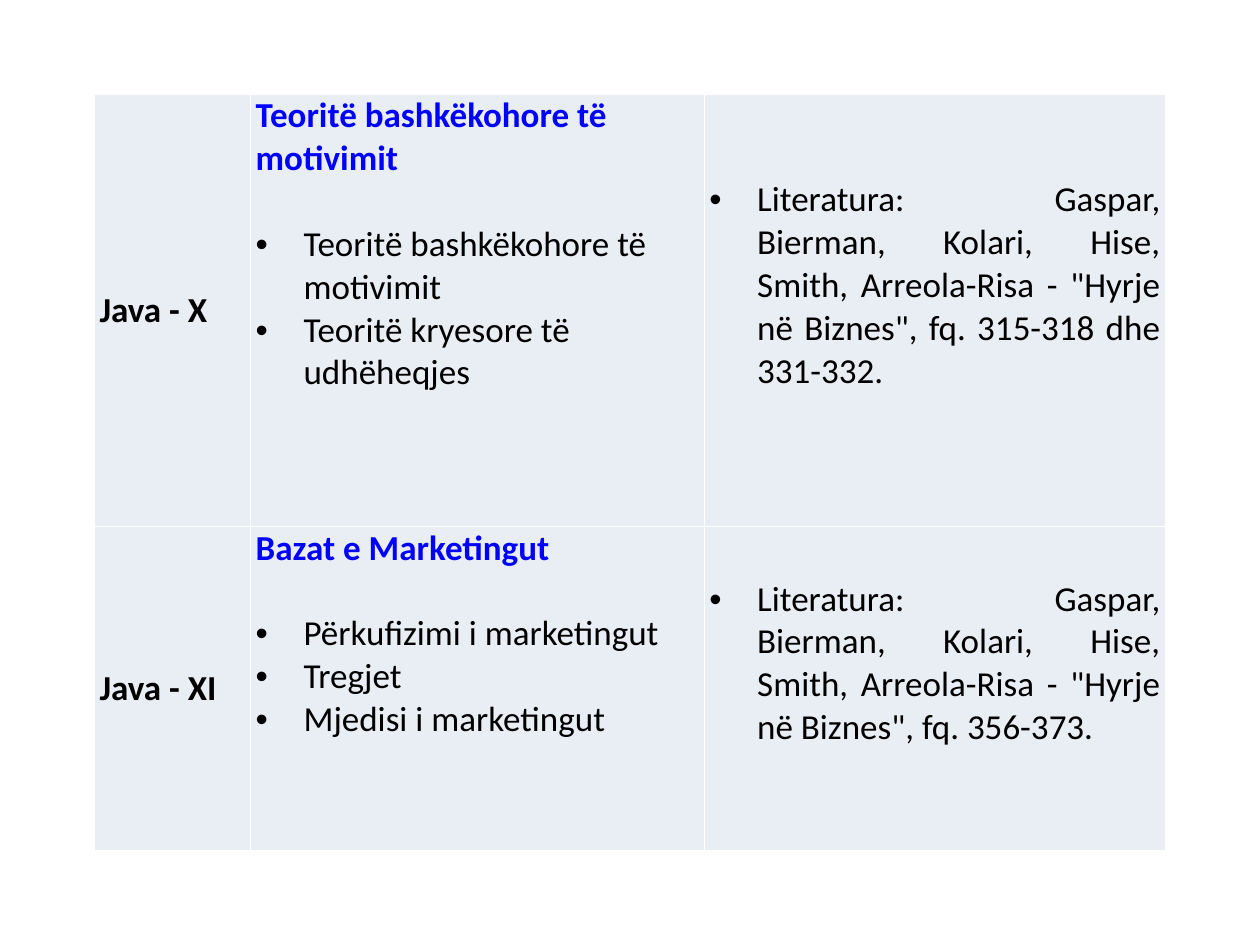
import pptx
import pptx.dml.color
import pptx.enum.text
import pptx.oxml
import pptx.oxml.ns
import pptx.util
from dataclasses import dataclass

Inches = pptx.util.Inches
Pt = pptx.util.Pt
ALIGN = pptx.enum.text.PP_ALIGN
ANCHOR = pptx.enum.text.MSO_ANCHOR


@dataclass(frozen=True)
class Theme:
    font: str = "Calibri"
    size: int = 20
    text: str = "000000"
    topic: str = "0000FF"
    cell: str = "E9EDF4"
    border: str = "FFFFFF"
    border_width: int = 1


THEME = Theme()
COLUMN_WIDTHS = (1.24, 3.6, 3.66)
BOOK = 'Literatura:  Gaspar, Bierman, Kolari, Hise, Smith, Arreola-Risa - "Hyrje në Biznes", fq. '

# Week, row height, topic, points, pages
WEEKS = (
    ("Java - X", 3.43, "Teoritë bashkëkohore të motivimit",
     ("Teoritë bashkëkohore të motivimit", "Teoritë kryesore të udhëheqjes"),
     "315-318 dhe 331-332."),
    ("Java - XI", 2.57, "Bazat e Marketingut",
     ("Përkufizimi i marketingut", "Tregjet", "Mjedisi i marketingut"),
     "356-373."),
)


def write(cell, text, first=False, bold=False, color=THEME.text,
          align=ALIGN.LEFT, before=0, after=0, bullet=False):
    """Write one paragraph into a cell."""
    frame = cell.text_frame
    paragraph = frame.paragraphs[0] if first else frame.add_paragraph()
    paragraph.alignment = align
    paragraph.space_before = Pt(before)
    paragraph.space_after = Pt(after)
    run = paragraph.add_run()
    run.text = text
    run.font.name = THEME.font
    run.font.size = Pt(THEME.size)
    run.font.bold = bold
    run.font.color.rgb = pptx.dml.color.RGBColor.from_string(color)
    if bullet:
        add_bullet(paragraph)


def add_bullet(paragraph):
    properties = paragraph._p.get_or_add_pPr()
    indent = Inches(0.38)
    properties.set("marL", str(indent))
    properties.set("indent", str(-indent))
    namespace = pptx.oxml.ns.nsdecls("a")
    for xml in (f'<a:buFont {namespace} typeface="Arial"/>',
                f'<a:buChar {namespace} char="•"/>'):
        properties.append(pptx.oxml.parse_xml(xml))


def style_cell(cell, anchor=ANCHOR.MIDDLE, bottom=0):
    """Set the margins, white borders and fill of a cell."""
    cell.vertical_anchor = anchor
    cell.margin_left = cell.margin_right = Inches(0.04)
    cell.margin_top = 0
    cell.margin_bottom = Inches(bottom)
    properties = cell._tc.get_or_add_tcPr()
    for side in ("lnL", "lnR", "lnT", "lnB"):
        properties.append(pptx.oxml.parse_xml(
            f'<a:{side} {pptx.oxml.ns.nsdecls("a")} w="{Pt(THEME.border_width)}">'
            f'<a:solidFill><a:srgbClr val="{THEME.border}"/></a:solidFill></a:{side}>'))
    cell.fill.solid()
    cell.fill.fore_color.rgb = pptx.dml.color.RGBColor.from_string(THEME.cell)


def add_schedule(slide):
    """Add the empty table with its column widths."""
    schedule = slide.shapes.add_table(
        len(WEEKS), len(COLUMN_WIDTHS),
        Inches(0.75), Inches(0.75), Inches(8.5), Inches(6)).table
    schedule.first_row = schedule.horz_banding = False
    for column, width in zip(schedule.columns, COLUMN_WIDTHS):
        column.width = Inches(width)
    return schedule


def fill_week(row, week, height, topic, points, pages):
    row.height = Inches(height)
    week_cell, topic_cell, reading_cell = row.cells

    # Week
    style_cell(week_cell)
    write(week_cell, week, first=True, bold=True, align=ALIGN.JUSTIFY,
          before=4.8, after=4.8)

    # Topic, one line apart from its points
    style_cell(topic_cell, anchor=ANCHOR.TOP)
    write(topic_cell, topic, first=True, bold=True, color=THEME.topic, after=24.4)
    for point in points:
        write(topic_cell, point, bullet=True)

    # Reading, raised a little above the middle
    style_cell(reading_cell, bottom=0.4)
    write(reading_cell, BOOK + pages, first=True, align=ALIGN.JUSTIFY, bullet=True)


def main():
    deck = pptx.Presentation()
    deck.slide_width = Inches(10)
    deck.slide_height = Inches(7.5)
    slide = deck.slides.add_slide(deck.slide_layouts[6])
    schedule = add_schedule(slide)
    for row, week in zip(schedule.rows, WEEKS):
        fill_week(row, *week)
    deck.save("out.pptx")


if __name__ == "__main__":
    main()
